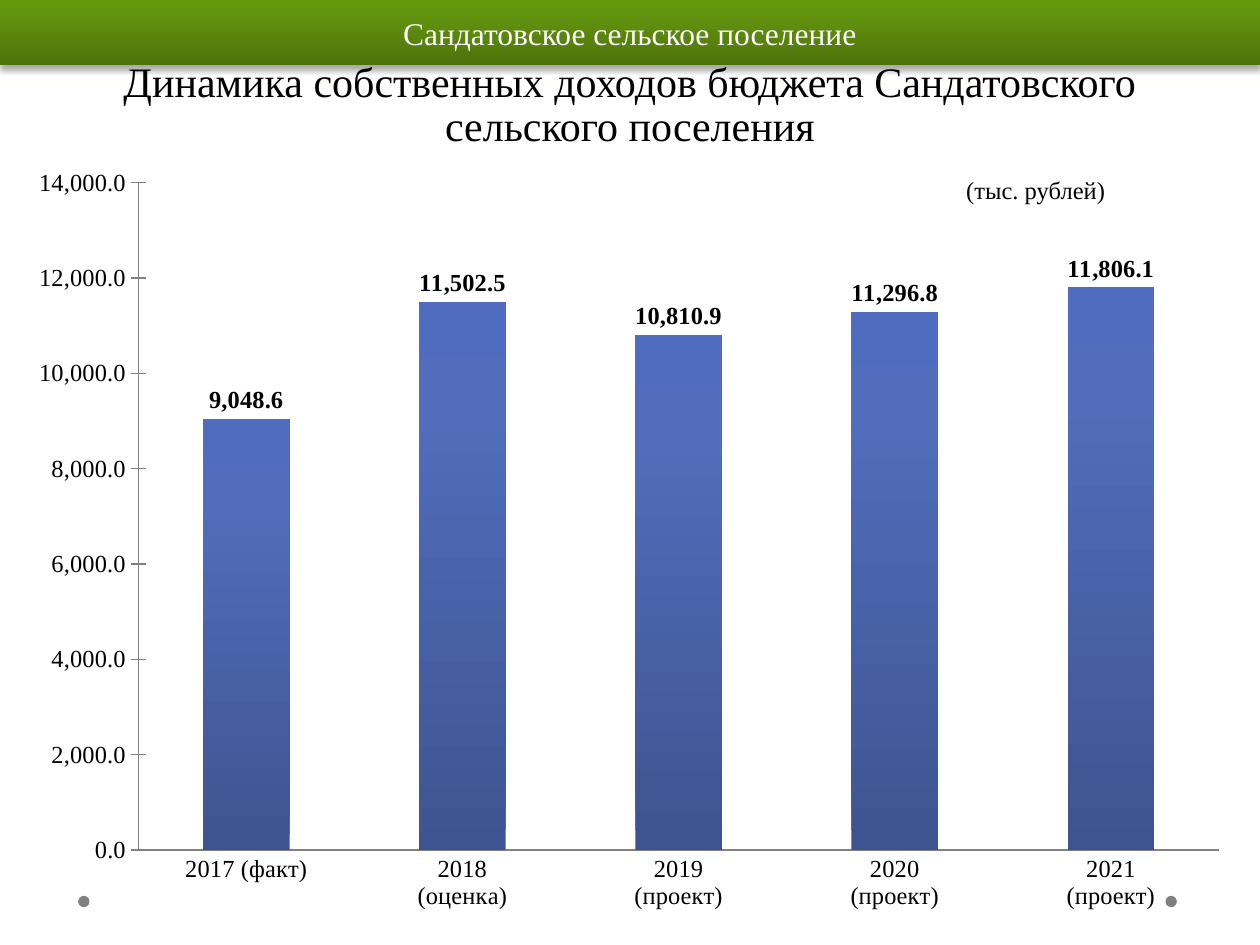
from lxml.etree import SubElement
from pptx import Presentation
from pptx.chart.data import CategoryChartData
from pptx.dml.color import RGBColor
from pptx.enum.chart import XL_CHART_TYPE, XL_LABEL_POSITION, XL_TICK_MARK
from pptx.enum.shapes import MSO_SHAPE
from pptx.enum.text import MSO_ANCHOR, PP_ALIGN
from pptx.oxml import parse_xml
from pptx.oxml.ns import nsdecls, qn
from pptx.util import Inches, Pt

COLORS = {
    "black": "000000", "white": "FFFFFF", "grey": "808080",
    "green_dark": "4D720B", "green": "64940F", "green_light": "65970C",
    "blue_dark": "3E5490", "blue": "516DBB", "blue_light": "4F6CBE",
}
FONT = "Times New Roman"


def style_font(font, size, color="black", bold=False):
    font.name = FONT
    font.size = Pt(size)
    font.bold = bold
    font.color.rgb = RGBColor.from_string(COLORS[color])


def fill_gradient(fill, element, hue):
    fill.gradient()
    fill.gradient_angle = 90
    stops = element.find(".//" + qn("a:gsLst"))
    stops.clear()
    for position, color in ((0, f"{hue}_dark"), (80, hue), (100, f"{hue}_light")):
        stop = SubElement(stops, qn("a:gs"), pos=str(position * 1000))
        SubElement(stop, qn("a:srgbClr"), val=COLORS[color])


prs = Presentation()
prs.slide_width = Inches(10)
prs.slide_height = Inches(7.5)
slide = prs.slides.add_slide(prs.slide_layouts[6])
shapes = slide.shapes

for left in (9.25, 0.62):
    dot = shapes.add_shape(MSO_SHAPE.OVAL, Inches(left), Inches(7.11), Inches(0.09), Inches(0.09))
    dot.shadow.inherit = False
    dot.fill.solid()
    dot.fill.fore_color.rgb = RGBColor.from_string(COLORS["grey"])
    dot.line.fill.background()

title = shapes.add_textbox(Inches(0.5), Inches(0.72), Inches(9), Inches(0.52))
title.text_frame.word_wrap = True
title.text_frame.vertical_anchor = MSO_ANCHOR.BOTTOM
title.text_frame.text = "Динамика собственных доходов бюджета Сандатовского сельского поселения"
heading = title.text_frame.paragraphs[0]
heading.alignment = PP_ALIGN.CENTER
heading.line_spacing = Pt(25)
style_font(heading.runs[0].font, 24)

income = CategoryChartData(number_format="#,##0.0")
income.categories = ["2017 (факт)", "2018\n(оценка)", "2019\n(проект)", "2020\n(проект)", "2021\n(проект)"]
income.add_series("Доходы", (9048.6, 11502.5, 10810.9, 11296.8, 11806.1))
chart = shapes.add_chart(
    XL_CHART_TYPE.COLUMN_CLUSTERED, Inches(0.31), Inches(1.33), Inches(9.37), Inches(6.02), income
).chart
chart.has_title = False
chart.has_legend = False
style_font(chart.font, 14)

plot = chart.plots[0]
plot.gap_width = 150
plot.vary_by_categories = False
columns = plot.series[0]
fill_gradient(columns.format.fill, columns._element, "blue")
plot.has_data_labels = True
labels = plot.data_labels
labels.show_value = True
labels.number_format = "#,##0.0"
labels.number_format_is_linked = False
labels.position = XL_LABEL_POSITION.OUTSIDE_END
style_font(labels.font, 14, bold=True)

years = chart.category_axis
years.major_tick_mark = XL_TICK_MARK.NONE
amounts = chart.value_axis
amounts.major_tick_mark = XL_TICK_MARK.CROSS
amounts.has_major_gridlines = False
amounts.minimum_scale = 0
amounts.maximum_scale = 14000
amounts.major_unit = 2000
amounts.tick_labels.number_format = "#,##0.0"
amounts.tick_labels.number_format_is_linked = False
for axis in (years, amounts):
    style_font(axis.tick_labels.font, 14)
    axis.format.line.color.rgb = RGBColor.from_string(COLORS["grey"])
    axis.format.line.width = Pt(0.75)

plot_area = chart._chartSpace.find(".//" + qn("c:plotArea"))
for old_layout in plot_area.findall(qn("c:layout")):
    plot_area.remove(old_layout)
plot_area.insert(0, parse_xml(
    f'<c:layout {nsdecls("c")}><c:manualLayout><c:layoutTarget val="inner"/>'
    '<c:xMode val="edge"/><c:yMode val="edge"/><c:x val="0.08"/><c:y val="0.02"/>'
    '<c:w val="0.92"/><c:h val="0.88"/></c:manualLayout></c:layout>'
))

unit = shapes.add_textbox(Inches(7.57), Inches(1.34), Inches(1.48), Inches(0.33))
unit.text_frame.word_wrap = True
unit.text_frame.text = "(тыс. рублей)"
style_font(unit.text_frame.paragraphs[0].runs[0].font, 14)

banner = shapes.add_shape(MSO_SHAPE.RECTANGLE, 0, 0, Inches(10), Inches(0.52))
fill_gradient(banner.fill, banner._element, "green")
banner.line.fill.background()
banner.shadow.inherit = False
shadow = SubElement(
    banner._element.spPr.find(qn("a:effectLst")), qn("a:outerShdw"),
    blurRad=str(Pt(3.1)), dist=str(Pt(1.8)), dir="5400000", rotWithShape="0",
)
shadow_color = SubElement(shadow, qn("a:srgbClr"), val=COLORS["black"])
SubElement(shadow_color, qn("a:alpha"), val="35000")
banner.text_frame.vertical_anchor = MSO_ANCHOR.MIDDLE
banner.text_frame.text = "Сандатовское сельское поселение"
settlement = banner.text_frame.paragraphs[0]
settlement.alignment = PP_ALIGN.CENTER
style_font(settlement.runs[0].font, 18, "white")

prs.save("out.pptx")
